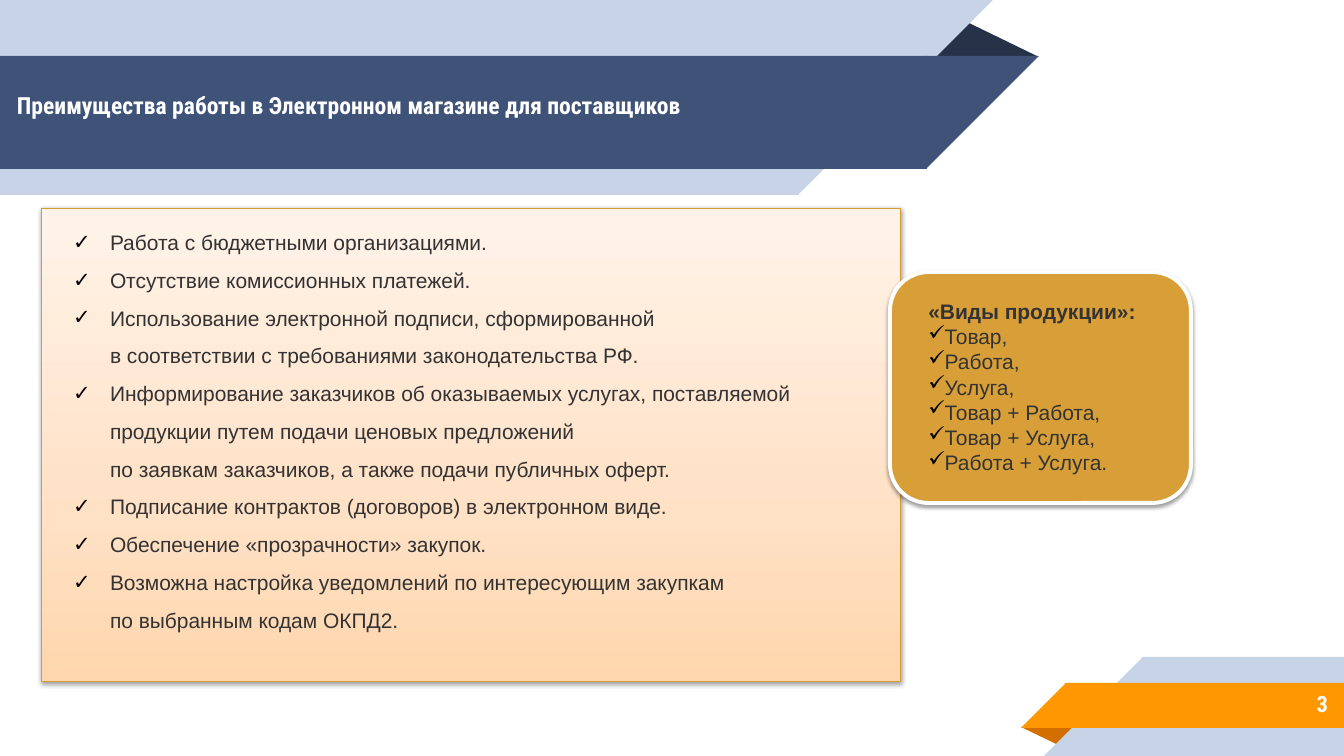
from pptx import Presentation
from pptx.dml.color import RGBColor as RGB
from pptx.enum.shapes import MSO_SHAPE as Form
from pptx.enum.text import MSO_ANCHOR as Anchor, MSO_AUTO_SIZE as Fit, PP_ALIGN as Align
from pptx.oxml import parse_xml
from pptx.oxml.ns import nsdecls, qn
from pptx.util import Pt

# Content
TITLE = "Преимущества работы в Электронном магазине для поставщиков"
PERKS = [
    "Работа с бюджетными организациями.",
    "Отсутствие комиссионных платежей.",
    "Использование электронной подписи, сформированной\n"
    "в соответствии с требованиями законодательства РФ.",
    "Информирование заказчиков об оказываемых услугах, поставляемой "
    "продукции путем подачи ценовых предложений\n"
    "по заявкам заказчиков, а также подачи публичных оферт.",
    "Подписание контрактов (договоров) в электронном виде.",
    "Обеспечение «прозрачности» закупок.",
    "Возможна настройка уведомлений по интересующим закупкам\n"
    "по выбранным кодам ОКПД2.",
]
KINDS_HEAD = "«Виды продукции»:"
KINDS = ["Товар,", "Работа,", "Услуга,",
         "Товар + Работа,", "Товар + Услуга,", "Работа + Услуга."]
PAGE = "3"


class Theme:
    pale, navy, night = "C7D3E6", "3F5378", "263248"
    orange, rust = "FF9800", "D26F00"
    gold, edge = "D89F39", "D79D34"
    white, text, tick = "FFFFFF", "333333", "000000"
    peach = [(0, "FFD6AD"), (35, "FFE1C5"), (100, "FFF3E9")]
    head, body = "Roboto Condensed", "Arial"
    title_size, body_size, page_size = 18, 16, 17.1


# Layout in px: left, top, width, height
EMU = 9680
WIDE, HIGH = 1344, 756
PAD = 9
RECT, WEDGE, PEAK = Form.RECTANGLE, Form.RIGHT_TRIANGLE, Form.ISOSCELES_TRIANGLE
# form, place, colour, flip
RIBBONS = [
    (PEAK, (924, 19, 115, 38), Theme.night, None),
    (RECT, (0, 0, 799, 195), Theme.pale, None),
    (WEDGE, (798, 0, 195, 195), Theme.pale, "flipV"),
    (RECT, (0, 56, 927, 113), Theme.navy, None),
    (WEDGE, (926, 56, 113, 113), Theme.navy, "flipV"),
    (PEAK, (1021, 727, 58, 19), Theme.rust, "rot"),
    (RECT, (1142, 657, 202, 99), Theme.pale, None),
    (WEDGE, (1044, 657, 99, 99), Theme.pale, "flipH"),
    (RECT, (1065, 683, 279, 45), Theme.orange, None),
    (WEDGE, (1021, 683, 45, 45), Theme.orange, "flipH"),
]
PANEL = (42, 208, 859, 474)
LIST = (54, 208, 757, 474)
HEAD = (8, 66, 959, 79)
CARD = (890, 272, 301, 231)
KIND = (919, 294, 235, 188)
NUMBER = (1119, 681, 218, 46)


def px(*nums):
    return [n * EMU for n in nums]


def draw(form, place, color):
    shape = slide.shapes.add_shape(form, *px(*place))
    shape.shadow.inherit = False
    shape.fill.solid()
    shape.fill.fore_color.rgb = RGB.from_string(color)
    shape.line.fill.background()
    return shape


def frame(shape, color, width):
    """Outline a shape and give it a soft shadow below."""
    shape.line.color.rgb = RGB.from_string(color)
    shape.line.width = Pt(width)
    shape._element.spPr.find(qn("a:effectLst")).append(parse_xml(
        f'<a:outerShdw {nsdecls("a")} blurRad="{Pt(3.1)}" dist="{Pt(1.6)}" '
        'dir="5400000" rotWithShape="0"><a:srgbClr val="000000">'
        '<a:alpha val="38000"/></a:srgbClr></a:outerShdw>'))


def shade(shape, stops):
    shape.fill.gradient()
    shape.fill.gradient_angle = 90
    group = shape._element.spPr.find(".//" + qn("a:gsLst"))
    group.clear()
    for pos, color in stops:
        group.append(parse_xml(
            f'<a:gs {nsdecls("a")} pos="{pos * 1000}">'
            f'<a:srgbClr val="{color}"/></a:gs>'))


def place_at(shape, place):
    shape.left, shape.top, shape.width, shape.height = px(*place)
    slide.shapes._spTree.append(shape._element)  # bring to front


def set_box(shape, anchor, pad=None, fit=Fit.NONE):
    box = shape.text_frame
    box.word_wrap, box.auto_size, box.vertical_anchor = True, fit, anchor
    if pad:
        box.margin_left = box.margin_right = pad * EMU
        box.margin_top = box.margin_bottom = pad * EMU
    return box


def style(para, face, size, color, bold=False, align=Align.LEFT):
    para.alignment = align
    font = para.font
    font.name, font.size, font.bold = face, Pt(size), bold
    font.color.rgb = RGB.from_string(color)


def write(box, lines, left, hang, space, start=0):
    """Fill a box with ticked lines, after any that it holds already."""
    for i, line in enumerate(lines, start):
        para = box.add_paragraph() if i else box.paragraphs[0]
        para.text = line
        props = para._p.get_or_add_pPr()
        props.set("marL", str(left * EMU))
        props.set("indent", str(-hang * EMU))
        for mark in (f'buClr {nsdecls("a")}><a:srgbClr val="{Theme.tick}"/></a:buClr',
                     f'buChar {nsdecls("a")} char="✓"/'):
            props.append(parse_xml(f"<a:{mark}>"))
        para.line_spacing, para.space_before = space, Pt(0)
        style(para, Theme.body, Theme.body_size, Theme.text)


deck = Presentation()
deck.slide_width, deck.slide_height = px(WIDE, HIGH)
slide = deck.slides.add_slide(deck.slide_layouts[1])

# Ribbons at top and bottom
for form, place, color, flip in RIBBONS:
    part = draw(form, place, color)
    if form == PEAK:
        part.adjustments[0] = 0.32
    if flip == "rot":
        part.rotation = 180
    elif flip:
        part._element.spPr.xfrm.set(flip, "1")

# Panel with the list of advantages
panel = draw(RECT, PANEL, Theme.white)
shade(panel, Theme.peach)
frame(panel, Theme.edge, 0.75)
body = slide.placeholders[1]
place_at(body, LIST)
write(set_box(body, Anchor.TOP, PAD), PERKS, 47, 37, 1.5)

# Title
title = slide.shapes.title
place_at(title, HEAD)
box = set_box(title, Anchor.MIDDLE, PAD)
box.text = TITLE
style(box.paragraphs[0], Theme.head, Theme.title_size, Theme.white, True)

# Card with the kinds of product
frame(draw(Form.ROUNDED_RECTANGLE, CARD, Theme.gold), Theme.white, 3)
kinds = slide.shapes.add_textbox(*px(*KIND))
box = set_box(kinds, Anchor.TOP, fit=Fit.SHAPE_TO_FIT_TEXT)
box.text = KINDS_HEAD
style(box.paragraphs[0], Theme.body, Theme.body_size, Theme.text, True)
write(box, KINDS, 15, 29, 1.0, start=1)

# Page number
number = slide.shapes.add_textbox(*px(*NUMBER))
box = set_box(number, Anchor.MIDDLE, PAD)
box.text = PAGE
style(box.paragraphs[0], Theme.head, Theme.page_size, Theme.white, True, Align.RIGHT)

deck.save("out.pptx")
